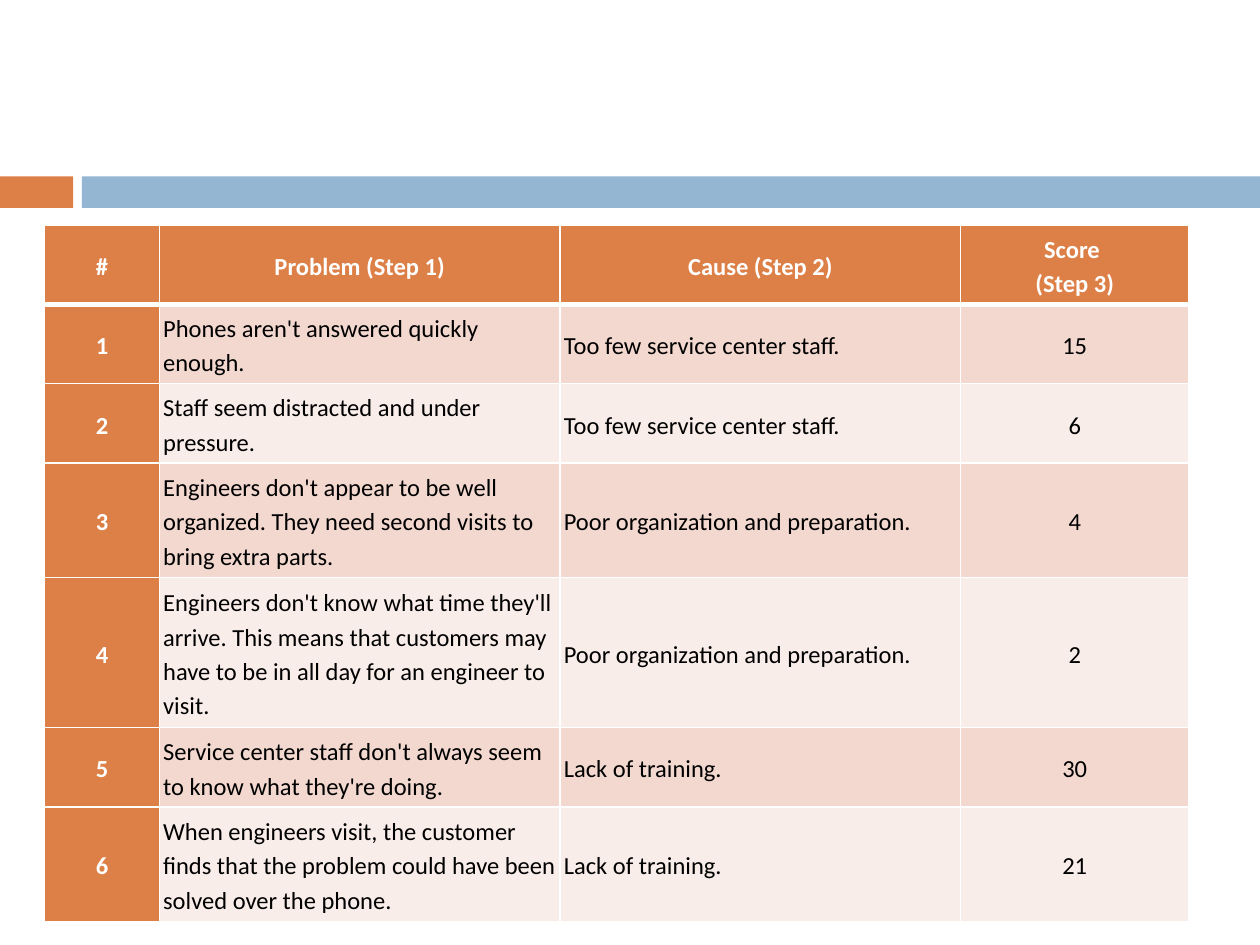
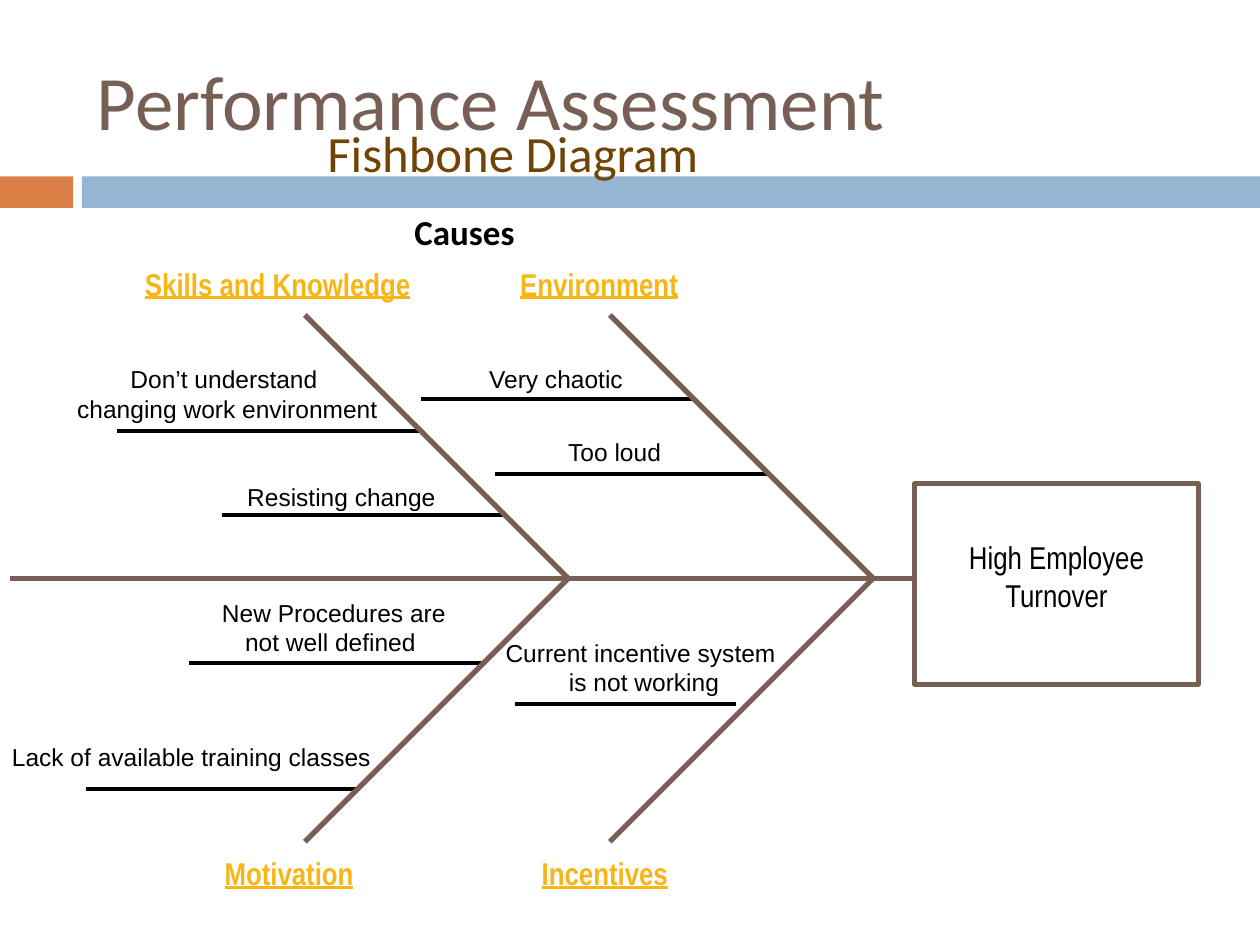
from dataclasses import dataclass

import lxml.etree
import pptx
import pptx.dml.color
import pptx.enum.shapes
import pptx.enum.text
import pptx.oxml
import pptx.oxml.ns
import pptx.util

ALIGN = pptx.enum.text.PP_ALIGN
ANCHOR = pptx.enum.text.MSO_ANCHOR
CELL = 0.25  # side of a grid cell in inches: the slide has 40 columns, 30 rows
COLUMNS, ROWS = 40, 30

ORANGE, BLUE, BROWN = "DD8047", "94B6D2", "775F55"
BLACK, WHITE = "000000", "FFFFFF"
BANDS = ("F2D8CF", "F9EDE9")


@dataclass(frozen=True)
class Style:
    size: float
    font: str
    color: str
    bold: bool = False
    underline: bool = False
    align: ALIGN = ALIGN.CENTER


TITLE = Style(44, "Calibri", BROWN, align=ALIGN.LEFT)
SUBTITLE = Style(29, "Calibri", "704404", align=ALIGN.LEFT)
CAUSES = Style(20, "Calibri", BLACK, bold=True, align=ALIGN.LEFT)
CATEGORY = Style(18, "Arial Narrow", "F7B615", bold=True, underline=True)
EFFECT = Style(18, "Arial Narrow", BLACK)
DETAIL = Style(14, "Arial", BLACK)
HEAD_CELL = Style(14, "Calibri", WHITE, bold=True)
TEXT_CELL = Style(14, "Calibri", BLACK, align=ALIGN.LEFT)
SCORE_CELL = Style(14, "Calibri", BLACK)


@dataclass(frozen=True)
class Label:
    """Text in a box whose place and size are in grid cells."""
    text: str
    x: float
    y: float
    w: float
    h: float
    style: Style
    anchor: ANCHOR = ANCHOR.MIDDLE
    wrap: bool = False


@dataclass(frozen=True)
class Branch:
    """A cause line that ends on the rib of a joint, less a gap."""
    joint: float
    y: float
    length: float
    gap: float = 0


HEADINGS = (
    Label("Performance Assessment", 2.68, 1, 35.68, 4.32, TITLE, wrap=True),
    Label("Fishbone Diagram", 10, 3.68, 19, 2.96, SUBTITLE, ANCHOR.TOP, True),
    Label("Causes", 12.76, 6.48, 4.12, 1.76, CAUSES, ANCHOR.TOP),
)
CATEGORY_TOP, CATEGORY_BOTTOM = 8.2, 26.92
CATEGORIES = (
    Label("Skills and Knowledge", 4.16, CATEGORY_TOP, 9.32, 1.6, CATEGORY),
    Label("Environment", 16.08, CATEGORY_TOP, 5.88, 1.6, CATEGORY),
    Label("Motivation", 6.72, CATEGORY_BOTTOM, 4.92, 1.6, CATEGORY),
    Label("Incentives", 16.76, CATEGORY_BOTTOM, 4.88, 1.6, CATEGORY),
)
DETAILS = (
    Label("Don’t understand \nchanging work environment",
          2.04, 11.36, 10.36, 2.28, DETAIL),
    Label("Resisting change", 7.44, 15.12, 6.8, 1.32, DETAIL),
    Label("Very chaotic ", 15, 11.36, 5.52, 1.32, DETAIL),
    Label("Too loud ", 17.64, 13.68, 3.96, 1.32, DETAIL),
    Label("Lack of available training classes",
          -0.04, 23.36, 12.24, 1.32, DETAIL),
    Label("Current incentive system\n is not working",
          15.64, 20.04, 9.4, 2.28, DETAIL),
)
PROCEDURES = Label("New Procedures are\nnot well defined ",
                   6.64, 19.04, 7.92, 2, DETAIL)
TURNOVER = Label("High Employee\nTurnover", 30.32, 16.88, 6.44, 2.8, EFFECT)

SPINE_Y, SPINE_START, SPINE_END = 18.36, 0.32, 29.04
LEFT_JOINT, RIGHT_JOINT = JOINTS = (18.04, 27.72)
RIB_REACH = 8.36
BRANCHES = (
    Branch(LEFT_JOINT, 13.68, 9.64),
    Branch(LEFT_JOINT, 16.36, 9),
    Branch(LEFT_JOINT, 21.04, 9.36),
    Branch(LEFT_JOINT, 25.04, 8.64),
    Branch(RIGHT_JOINT, 12.68, 8.68),
    Branch(RIGHT_JOINT, 15.04, 8.68),
    Branch(RIGHT_JOINT, 22.36, 7, gap=0.36),
)

TABLE_X, TABLE_Y = 1.42, 7.14
TABLE_COLUMNS = (3.64, 12.72, 12.72, 7.24)
TABLE_ROWS = (2.52, 2.52, 2.52, 3.64, 4.76, 2.52, 3.64)
FEW_STAFF = "Too few service center staff."
POOR_PLANNING = "Poor organization and preparation."
NO_TRAINING = "Lack of training."
HEADER = ("#", "Problem (Step 1)", "Cause (Step 2)", "Score \n(Step 3)")
PROBLEMS = (
    ("Phones aren't answered quickly enough.", FEW_STAFF, 15),
    ("Staff seem distracted and under pressure.", FEW_STAFF, 6),
    ("Engineers don't appear to be well organized. They need second visits "
     "to bring extra parts.", POOR_PLANNING, 4),
    ("Engineers don't know what time they'll arrive. This means that "
     "customers may have to be in all day for an engineer to visit.",
     POOR_PLANNING, 2),
    ("Service center staff don't always seem to know what they're doing.",
     NO_TRAINING, 30),
    ("When engineers visit, the customer finds that the problem could have "
     "been solved over the phone.", NO_TRAINING, 21),
)


def grid(cells: float) -> pptx.util.Emu:
    return pptx.util.Inches(cells * CELL)


def rgb(color: str) -> pptx.dml.color.RGBColor:
    return pptx.dml.color.RGBColor.from_string(color)


def write(tf, text: str, style: Style, spacing: float | None = None) -> None:
    """Fill a text frame with one paragraph per line of text."""
    for i, line in enumerate(text.split("\n")):
        p = tf.paragraphs[0] if i == 0 else tf.add_paragraph()
        p.alignment = style.align
        p.line_spacing = spacing
        r = p.add_run()
        r.text = line
        values = {"size": pptx.util.Pt(style.size), "name": style.font,
                  "bold": style.bold, "underline": style.underline}
        for name, value in values.items():
            setattr(r.font, name, value)
        r.font.color.rgb = rgb(style.color)


def add_label(slide, label: Label):
    sp = slide.shapes.add_textbox(
        *map(grid, (label.x, label.y, label.w, label.h)))
    tf = sp.text_frame
    size = pptx.enum.text.MSO_AUTO_SIZE
    values = {"word_wrap": label.wrap, "vertical_anchor": label.anchor,
              "auto_size": size.NONE if label.wrap else size.SHAPE_TO_FIT_TEXT}
    for name, value in values.items():
        setattr(tf, name, value)
    write(tf, label.text, label.style)
    return tf


def add_rect(slide, x: float, y: float, w: float, h: float,
             fill: str | None = None, line: str | None = None) -> None:
    sp = slide.shapes.add_shape(pptx.enum.shapes.MSO_SHAPE.RECTANGLE,
                                *map(grid, (x, y, w, h)))
    sp.shadow.inherit = False
    if fill:
        sp.fill.solid()
        sp.fill.fore_color.rgb = rgb(fill)
    else:
        sp.fill.background()
    if line:
        sp.line.color.rgb = rgb(line)
        sp.line.width = pptx.util.Pt(3)
    else:
        sp.line.fill.background()


def add_line(slide, x1: float, y1: float, x2: float, y2: float,
             color: str = BROWN, width: float = 3) -> None:
    cn = slide.shapes.add_connector(pptx.enum.shapes.MSO_CONNECTOR.STRAIGHT,
                                    *map(grid, (x1, y1, x2, y2)))
    cn.line.color.rgb = rgb(color)
    cn.line.width = pptx.util.Pt(width)
    lxml.etree.SubElement(cn._element.spPr, pptx.oxml.ns.qn("a:effectLst"))


def add_banded_slide(prs):
    slide = prs.slides.add_slide(prs.slide_layouts[6])
    add_rect(slide, 0, 5.6, 2.32, 1, ORANGE)
    add_rect(slide, 2.6, 5.6, COLUMNS - 2.6, 1, BLUE)
    return slide


def set_borders(cell, **widths: float) -> None:
    """Draw white borders; widths in points by side: L, R, T, B."""
    for side, width in widths.items():
        cell._tc.get_or_add_tcPr().append(pptx.oxml.parse_xml(
            f'<a:ln{side} {pptx.oxml.ns.nsdecls("a")} '
            f'w="{pptx.util.Pt(width)}"><a:solidFill>'
            f'<a:srgbClr val="{WHITE}"/></a:solidFill></a:ln{side}>'))


def format_cell(cell, row: int, col: int, text: str) -> None:
    set_borders(cell, L=1, R=1, T=3 if row == 1 else 1, B=3 if row == 0 else 1)
    heading = row == 0 or col == 0
    cell.fill.solid()
    cell.fill.fore_color.rgb = rgb(ORANGE if heading else BANDS[(row - 1) % 2])
    cell.vertical_anchor = ANCHOR.MIDDLE
    for side in ("left", "right", "top", "bottom"):
        setattr(cell, f"margin_{side}", pptx.util.Inches(0.03))
    style = HEAD_CELL if heading else SCORE_CELL if col == 3 else TEXT_CELL
    write(cell.text_frame, text, style, 1.15)


def build_problem_table(prs) -> None:
    slide = add_banded_slide(prs)
    table = slide.shapes.add_table(
        len(TABLE_ROWS), len(TABLE_COLUMNS),
        *map(grid, (TABLE_X, TABLE_Y, sum(TABLE_COLUMNS), sum(TABLE_ROWS)))
    ).table
    table.first_row = table.horz_banding = False
    for column, width in zip(table.columns, TABLE_COLUMNS):
        column.width = grid(width)
    for row, height in zip(table.rows, TABLE_ROWS):
        row.height = grid(height)
    numbered = [(n, *problem) for n, problem in enumerate(PROBLEMS, 1)]
    for row, values in enumerate([HEADER, *numbered]):
        for col, value in enumerate(values):
            format_cell(table.cell(row, col), row, col, str(value))


def build_fishbone(prs) -> None:
    slide = add_banded_slide(prs)
    add_line(slide, SPINE_START, SPINE_Y, SPINE_END, SPINE_Y)
    add_rect(slide, SPINE_END, 15.36, 9, 6.36, line=BROWN)
    for branch in BRANCHES:
        # Ribs run at 45 degrees, so the way across equals the way up or down.
        end = branch.joint - abs(branch.y - SPINE_Y) - branch.gap
        add_line(slide, end, branch.y, end - branch.length, branch.y,
                 BLACK, 2.25)
    for joint in JOINTS:
        for reach in (-RIB_REACH, RIB_REACH):
            add_line(slide, joint, SPINE_Y,
                     joint - RIB_REACH, SPINE_Y + reach)
    title, subtitle, *_ = [add_label(slide, label) for label in HEADINGS]
    subtitle.paragraphs[0].space_before = pptx.util.Pt(7)
    for label in (*CATEGORIES, *DETAILS, TURNOVER):
        add_label(slide, label)
    add_label(slide, PROCEDURES).paragraphs[0].line_spacing = 0.7


def main() -> None:
    prs = pptx.Presentation()
    prs.slide_width, prs.slide_height = grid(COLUMNS), grid(ROWS)
    build_problem_table(prs)
    build_fishbone(prs)
    prs.save("out.pptx")


if __name__ == "__main__":
    main()
